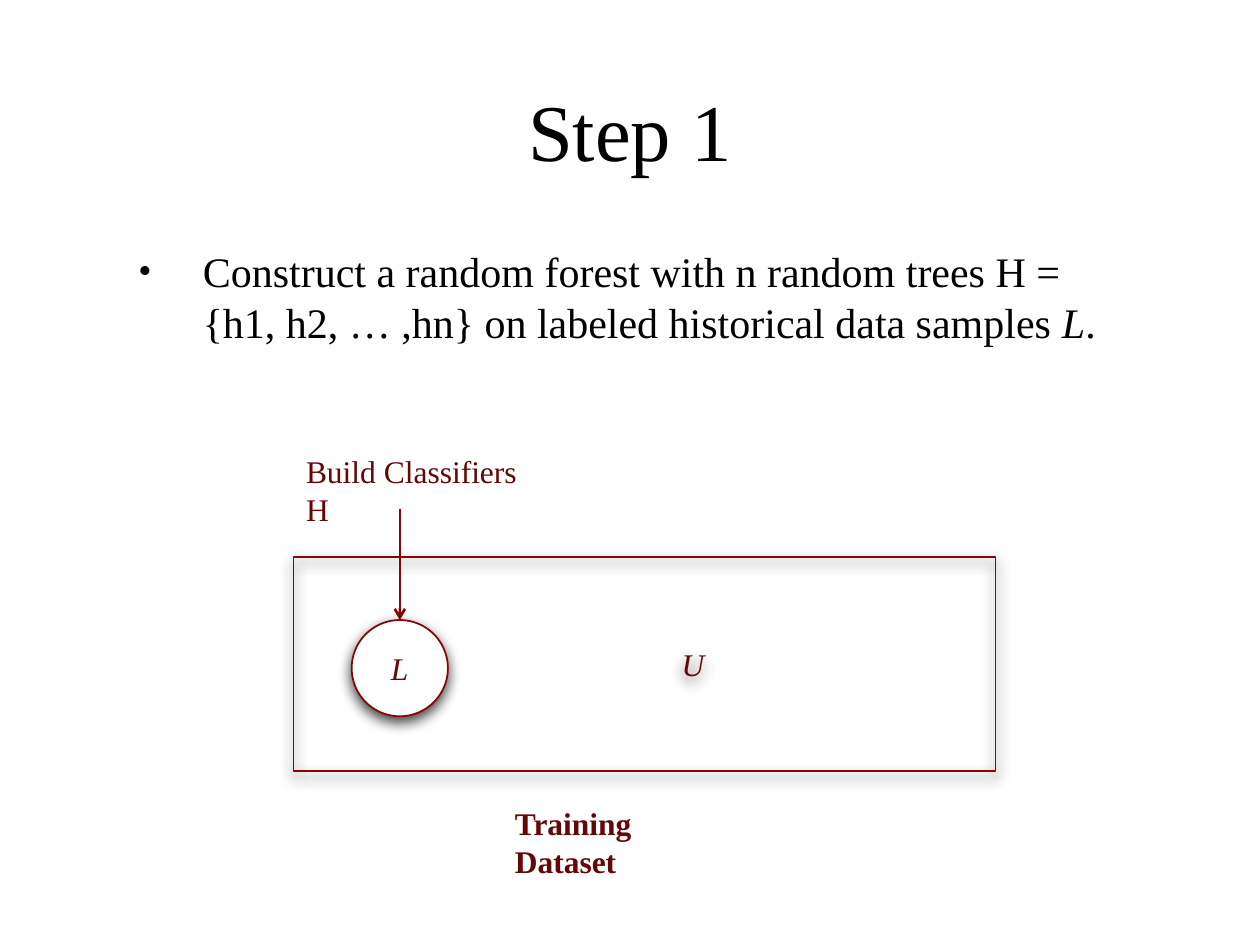
from dataclasses import dataclass

from lxml import etree
from pptx import Presentation
from pptx import util as u
from pptx.dml.color import RGBColor
from pptx.enum import shapes, text
from pptx.oxml import parse_xml
from pptx.oxml.ns import nsdecls, qn

BLACK = RGBColor(0x00, 0x00, 0x00)
WHITE = RGBColor(0xFF, 0xFF, 0xFF)
WINE = RGBColor(0x86, 0x06, 0x05)
DARK = RGBColor(0x64, 0x07, 0x06)
FACE = "Times New Roman"


@dataclass
class Box:
    left: float
    top: float
    width: float
    height: float

    def cm(self) -> list:
        return [u.Cm(n) for n in (self.left, self.top, self.width, self.height)]


@dataclass
class Node:
    kind: shapes.MSO_SHAPE
    box: Box
    label: str
    fill: RGBColor | None = None
    inset: float = 0.25


@dataclass
class Label:
    box: Box
    words: str
    bold: bool = False


def style(part, size: float, color: RGBColor, **more) -> None:
    """Format a paragraph or a run."""
    for key, val in {"name": FACE, "size": u.Pt(size), **more}.items():
        setattr(part.font, key, val)
    part.font.color.rgb = color


def add_glow(shape) -> None:
    """Give a shape a soft shadow that falls straight down."""
    shape.shadow.inherit = False
    shape._element.spPr.find(qn("a:effectLst")).append(parse_xml(
        f'<a:outerShdw {nsdecls("a")} blurRad="{u.Pt(8)}" dist="{u.Pt(3)}" '
        'dir="5400000" rotWithShape="0"><a:srgbClr val="000000">'
        '<a:alpha val="75000"/></a:srgbClr></a:outerShdw>'))


def add_node(slide, node: Node) -> None:
    shape = slide.shapes.add_shape(node.kind, *node.box.cm())
    add_glow(shape)
    if node.fill is None:
        shape.fill.background()
    else:
        shape.fill.solid()
        shape.fill.fore_color.rgb = node.fill
    shape.line.color.rgb = WINE
    shape.line.width = u.Pt(1)
    frame = shape.text_frame
    frame.margin_left = u.Cm(node.inset)
    frame.vertical_anchor = text.MSO_ANCHOR.MIDDLE
    para = frame.paragraphs[0]
    para.alignment = text.PP_ALIGN.CENTER
    run = para.add_run()
    run.text = node.label
    style(run, 18, DARK, italic=True)


def add_label(slide, label: Label) -> None:
    frame = slide.shapes.add_textbox(*label.box.cm()).text_frame
    frame.word_wrap = True
    run = frame.paragraphs[0].add_run()
    run.text = label.words
    style(run, 18, DARK, bold=label.bold)


def add_point(slide, box: Box, parts: list[tuple[str, bool]]) -> None:
    """Add a bullet point from (words, italic) parts."""
    frame = slide.shapes.add_textbox(*box.cm()).text_frame
    frame.word_wrap = True
    para = frame.paragraphs[0]
    props = para._p.get_or_add_pPr()
    dent = u.Cm(1.3)
    props.set("marL", str(dent))
    props.set("indent", str(-dent))
    for tag, key, val in (("buSzPct", "val", "90000"),
                          ("buFont", "typeface", FACE),
                          ("buChar", "char", "•")):
        etree.SubElement(props, qn(f"a:{tag}")).set(key, val)
    for words, slant in parts:
        run = para.add_run()
        run.text = words
        style(run, 24, BLACK, italic=slant)


def add_arrow(slide, x: float, top: float, end: float) -> None:
    line = slide.shapes.add_connector(
        shapes.MSO_CONNECTOR.STRAIGHT, u.Cm(x), u.Cm(top), u.Cm(x), u.Cm(end))
    line.line.color.rgb = WINE
    line.line.width = u.Pt(1.5)
    etree.SubElement(line.line._get_or_add_ln(), qn("a:tailEnd")).set("type", "arrow")
    etree.SubElement(line._element.spPr, qn("a:effectLst"))


def main() -> None:
    deck = Presentation()
    deck.slide_width, deck.slide_height = u.Cm(25.4), u.Cm(19.05)
    slide = deck.slides.add_slide(deck.slide_layouts[5])

    # Title
    title = slide.shapes.title
    place = Box(2.54, 1.4, 20.32, 2.41).cm()
    for key, val in zip(("left", "top", "width", "height"), place):
        setattr(title, key, val)
    title.text_frame.text = "Step 1"
    title.text_frame.vertical_anchor = text.MSO_ANCHOR.MIDDLE
    head = title.text_frame.paragraphs[0]
    head.alignment = text.PP_ALIGN.CENTER
    style(head.runs[0], 46, BLACK)

    # Bullet point
    add_point(slide, Box(2.54, 4.83, 20.32, 11.28), [
        ("Construct a random forest with n random trees H = {h1, h2, … ,hn} "
         "on labeled historical data samples ", False),
        ("L", True), (".", False)])

    # Data set with its labeled part
    ring = Box(7.09, 12.5, 1.94, 1.94)
    for node in (
        Node(shapes.MSO_SHAPE.RECTANGLE, Box(5.92, 11.23, 14.15, 4.32), "U",
             inset=2.2),
        Node(shapes.MSO_SHAPE.OVAL, ring, "L", WHITE),
    ):
        add_node(slide, node)

    # Arrow and labels
    add_arrow(slide, ring.left + ring.width / 2, 10.26, ring.top)
    for label in (
        Label(Box(10.13, 16.08, 4.8, 1.02), "Training Dataset", True),
        Label(Box(5.92, 8.99, 5.25, 1.02), "Build Classifiers H"),
    ):
        add_label(slide, label)

    deck.save("out.pptx")


if __name__ == "__main__":
    main()
